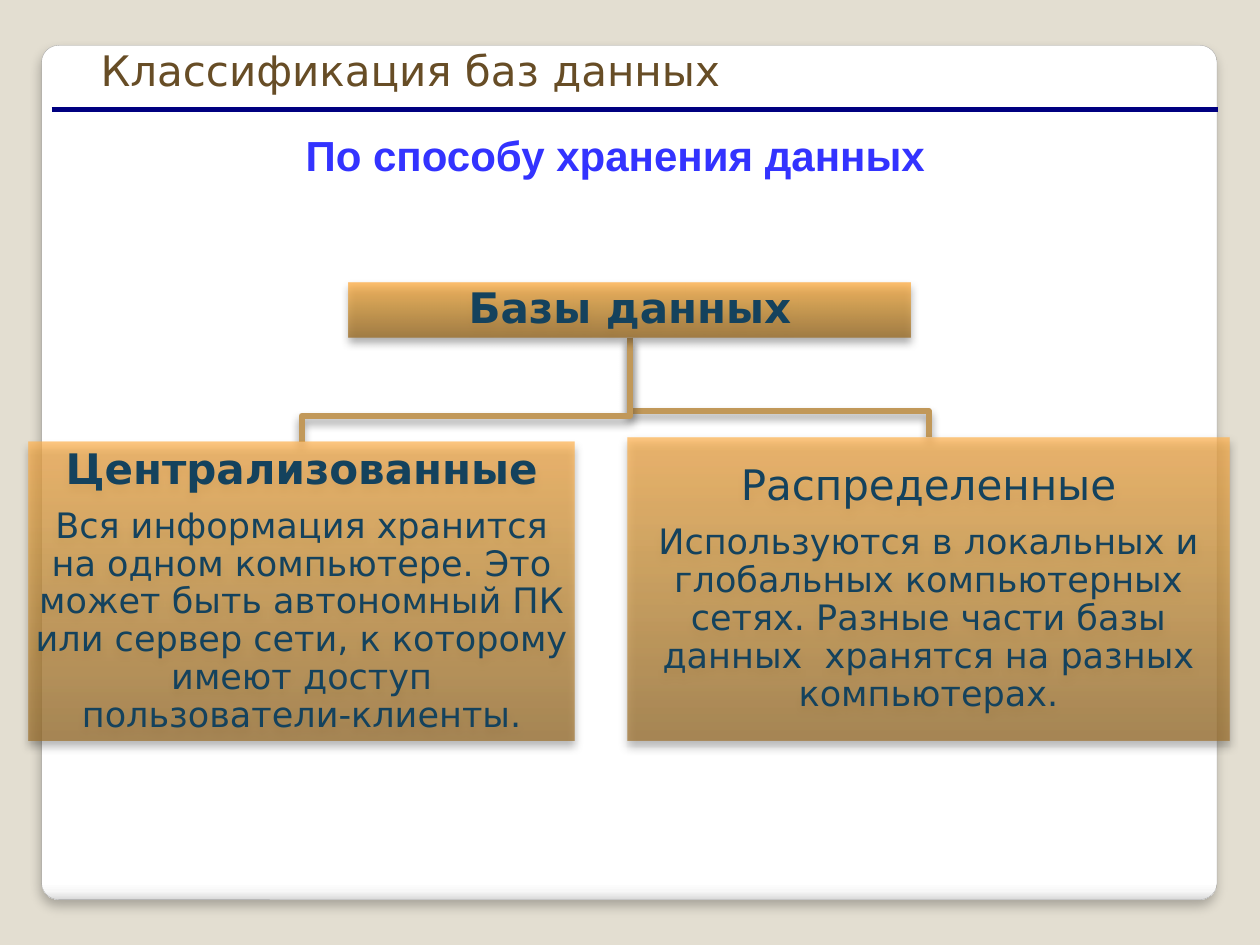
from dataclasses import dataclass

from lxml import etree
from pptx import Presentation
from pptx.dml.color import RGBColor
from pptx.enum import shapes, text
from pptx.oxml import ns
from pptx.util import Inches, Pt

COLORS = {
    "background": "E3DED1", "card_line": "A4A4A4", "rule": "000080",
    "heading": "3333FF", "title": "674D26", "branch": "C19859",
    "box_text": "14425D", "shadow": "000000",
}
CARD_STOPS = [(0, "FFFFFF"), (98, "FFFFFF"), (99, "F7F7F7"), (100, "DADADA")]
BOX_STOPS = [(0, "9D702B"), (60, "D69A3E"), (100, "FFB14C")]
BODY_FONT = "DejaVu Sans"


@dataclass
class Shadow:
    opacity: int
    blur: float
    distance: float


@dataclass
class Line:
    wording: str
    size: int
    bold: bool = False


@dataclass
class Box:
    left: float
    top: float
    width: float
    height: float
    opacity: int
    lines: list[Line]

    @property
    def center(self) -> float:
        return self.left + self.width / 2


CARD_SHADOW = Shadow(25, 6, 4)
BOX_SHADOW = Shadow(40, 5.2, 3)

ROOT = Box(2.77, 2.24, 4.46, 0.44, 80, [Line("Базы данных", 24, True)])
CHILDREN = [
    Box(4.98, 3.47, 4.78, 2.41, 70, [
        Line("Распределенные", 24),
        Line("Используются в локальных и глобальных компьютерных сетях. "
             "Разные части базы данных  хранятся на разных компьютерах.", 20),
    ]),
    Box(0.23, 3.51, 4.33, 2.37, 70, [
        Line("Централизованные", 24, True),
        Line("Вся информация хранится на одном компьютере. Это может быть "
             "автономный ПК или сервер сети, к которому имеют доступ "
             "пользователи-клиенты.", 20),
    ]),
]
BRANCH_DROP = 0.21  # from the horizontal bar down to a child box


def rgb(name: str) -> RGBColor:
    return RGBColor.from_string(COLORS[name])


def add_color(parent, color: str, opacity: int) -> None:
    element = etree.SubElement(parent, ns.qn("a:srgbClr"), val=color)
    if opacity < 100:
        etree.SubElement(element, ns.qn("a:alpha"), val=str(opacity * 1000))


def set_gradient(shape, stops, angle: int, opacity: int = 100) -> None:
    """Fill with colour stops; the angle runs counter-clockwise."""
    shape.fill.gradient()
    shape.fill.gradient_angle = angle
    stop_list = shape._element.spPr.find(".//" + ns.qn("a:gsLst"))
    for old_stop in list(stop_list):
        stop_list.remove(old_stop)
    for position, color in stops:
        stop = etree.SubElement(stop_list, ns.qn("a:gs"), pos=str(position * 1000))
        add_color(stop, color, opacity)


def set_shadow(shape, shadow: Shadow) -> None:
    shape.shadow.inherit = False
    effects = shape._element.spPr.find(ns.qn("a:effectLst"))
    outer = etree.SubElement(
        effects, ns.qn("a:outerShdw"), blurRad=str(Pt(shadow.blur)),
        dist=str(Pt(shadow.distance)), dir="5400000", rotWithShape="0")
    add_color(outer, COLORS["shadow"], shadow.opacity)


def format_run(paragraph, font_name: str, size: int, color: str, bold: bool) -> None:
    font = paragraph.runs[0].font
    font.name, font.size, font.bold = font_name, Pt(size), bold
    font.color.rgb = rgb(color)


def add_card(slide) -> None:
    card = slide.shapes.add_shape(
        shapes.MSO_SHAPE.ROUNDED_RECTANGLE,
        Inches(0.33), Inches(0.36), Inches(9.33), Inches(6.78))
    card.adjustments[0] = 0.02
    set_gradient(card, CARD_STOPS, 270)
    card.line.color.rgb = rgb("card_line")
    card.line.width = Pt(0.16)
    set_shadow(card, CARD_SHADOW)


def add_rule(slide) -> None:
    rule = slide.shapes.add_connector(
        shapes.MSO_CONNECTOR.STRAIGHT,
        Inches(0.41), Inches(0.87), Inches(9.67), Inches(0.87))
    rule.line.color.rgb = rgb("rule")
    rule.line.width = Pt(3)
    etree.SubElement(rule._element.spPr, ns.qn("a:effectLst"))


def add_label(slide, area, wording: str, font_name: str, color: str,
              alignment, bold: bool = False) -> None:
    label = slide.shapes.add_textbox(*map(Inches, area))
    label.text_frame.word_wrap = True
    label.text_frame.text = wording
    paragraph = label.text_frame.paragraphs[0]
    paragraph.alignment = alignment
    format_run(paragraph, font_name, 24, color, bold)


def add_branch(slide, parent: Box, child: Box) -> None:
    bar = child.top - BRANCH_DROP
    points = [(parent.center, parent.top + parent.height), (parent.center, bar),
              (child.center, bar), (child.center, child.top)]
    start, *others = [(Inches(x), Inches(y)) for x, y in points]
    builder = slide.shapes.build_freeform(*start)
    builder.add_line_segments(others, close=False)
    branch = builder.convert_to_shape()
    branch.fill.background()
    branch.line.color.rgb = rgb("branch")
    branch.line.width = Pt(3.35)
    set_shadow(branch, BOX_SHADOW)


def add_box(slide, box: Box) -> None:
    shape = slide.shapes.add_shape(
        shapes.MSO_SHAPE.RECTANGLE,
        *map(Inches, (box.left, box.top, box.width, box.height)))
    set_gradient(shape, BOX_STOPS, 90, box.opacity)
    shape.line.fill.background()
    set_shadow(shape, BOX_SHADOW)
    frame = shape.text_frame
    frame.word_wrap = True
    frame.vertical_anchor = text.MSO_ANCHOR.MIDDLE
    frame.margin_left = frame.margin_right = Inches(0.02)
    frame.margin_top = frame.margin_bottom = Inches(0.02)
    frame.text = "\n".join(line.wording for line in box.lines)
    for paragraph, line in zip(frame.paragraphs, box.lines):
        paragraph.alignment = text.PP_ALIGN.CENTER
        paragraph.line_spacing = 0.9
        paragraph.space_after = Pt(line.size * 0.35)
        format_run(paragraph, BODY_FONT, line.size, "box_text", line.bold)


def main() -> None:
    presentation = Presentation()
    presentation.slide_width, presentation.slide_height = Inches(10), Inches(7.5)
    slide = presentation.slides.add_slide(presentation.slide_layouts[6])
    slide.background.fill.solid()
    slide.background.fill.fore_color.rgb = rgb("background")

    add_card(slide)
    add_rule(slide)
    add_label(slide, (0.2, 0.98, 9.46, 0.91), "По способу хранения данных ",
              "Arial", "heading", text.PP_ALIGN.CENTER, bold=True)
    add_label(slide, (0.7, 0.3, 5.96, 0.49), "Классификация баз данных",
              BODY_FONT, "title", text.PP_ALIGN.LEFT)
    for child in CHILDREN:
        add_branch(slide, ROOT, child)
    for box in (ROOT, *reversed(CHILDREN)):
        add_box(slide, box)
    presentation.save("out.pptx")


if __name__ == "__main__":
    main()
